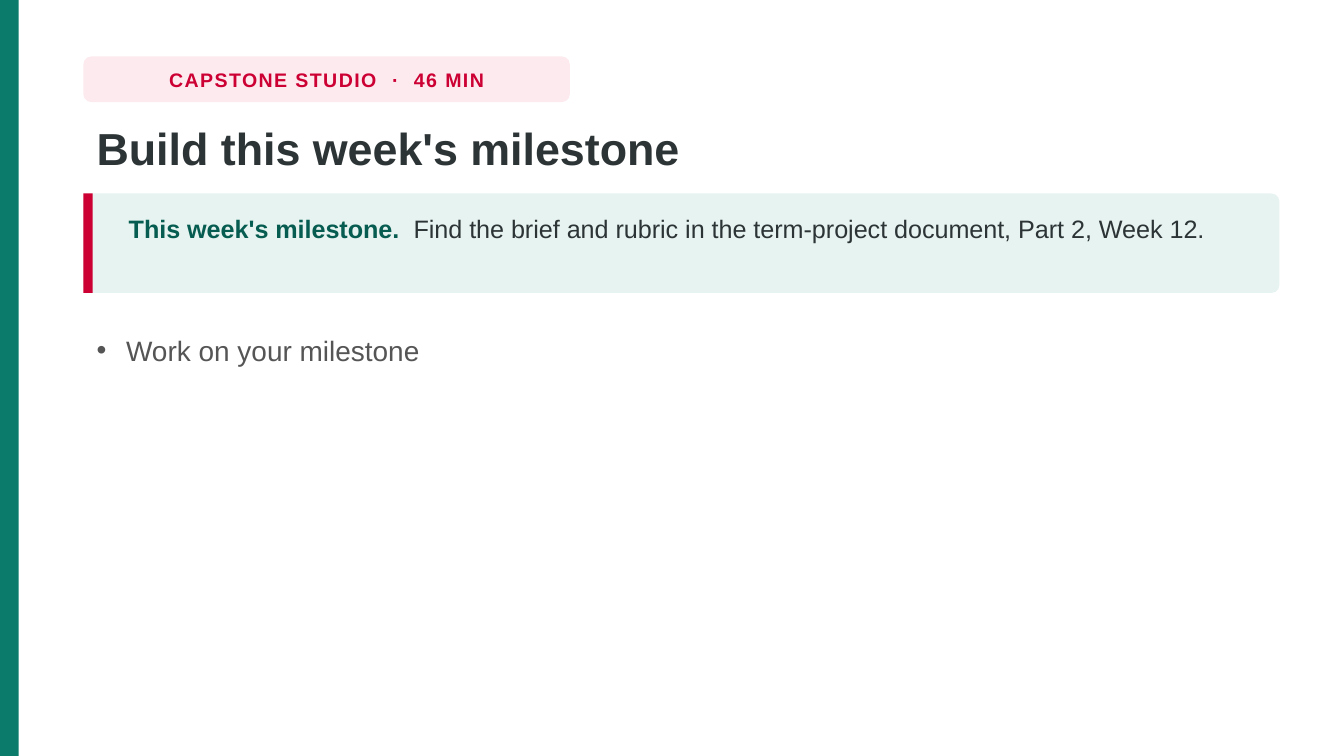
from lxml.etree import SubElement
from pptx import Presentation
from pptx.dml.color import RGBColor
from pptx.enum.shapes import MSO_SHAPE as Shape
from pptx.enum.text import MSO_ANCHOR as Anchor, PP_ALIGN as Align
from pptx.oxml.ns import qn
from pptx.util import Inches, Pt

CELL = 0.02  # inches per grid column and row
COLUMNS = 500
ROWS = COLUMNS * 9 / 16
LEFT, WIDTH = 31, 445
CORNER = 3  # corner radius of the panels, in cells
FONT = "Arial"
GREEN, DARK_GREEN, PALE_GREEN = "0B7B6B", "065C50", "E6F3F0"
RED, PALE_RED = "CC0033", "FDEAEF"
INK, GREY, WHITE = "2D3436", "555555", "FFFFFF"


def color(code):
    return RGBColor.from_string(code)


def cells(*counts):
    """Turn counts of grid cells into lengths."""
    return [Inches(count * CELL) for count in counts]


def add_panel(page, area, fill, rounded=False):
    kind = Shape.ROUNDED_RECTANGLE if rounded else Shape.RECTANGLE
    panel = page.shapes.add_shape(kind, *cells(*area))
    if rounded:
        panel.adjustments[0] = CORNER / min(area[2:])
    panel.shadow.inherit = False
    panel.fill.solid()
    panel.fill.fore_color.rgb = color(fill)
    panel.line.fill.background()


def add_text_box(page, area, line_spacing=None, wrap=True):
    """Add a text box and return it with its first paragraph."""
    box = page.shapes.add_textbox(*cells(*area))
    box.text_frame.word_wrap = wrap
    para = box.text_frame.paragraphs[0]
    para.line_spacing = line_spacing
    return box, para


def add_span(para, text, size, ink, bold=False, tracking=0):
    """Add one run; tracking is the letter spacing in points."""
    span = para.add_run()
    span.text = text
    span.font.name = FONT
    span.font.size = Pt(size)
    span.font.bold = bold
    span.font.color.rgb = color(ink)
    if tracking:
        span.font._element.set("spc", str(round(tracking * 100)))


def add_bullet(para, indent):
    props = para._p.get_or_add_pPr()
    props.set("marL", str(indent))
    props.set("indent", str(-indent))
    SubElement(props, qn("a:buFont")).set("typeface", FONT)
    SubElement(props, qn("a:buChar")).set("char", "•")


def add_badge(page, area, parts):
    """Add a label whose parts are set apart by widened spaces and a dot."""
    add_panel(page, area, PALE_RED, rounded=True)
    box, para = add_text_box(page, area, wrap=False)
    box.text_frame.vertical_anchor = Anchor.MIDDLE
    para.alignment = Align.CENTER
    for index, part in enumerate(parts):
        if index:
            for text, tracking in ((" ", 4.5), ("·", 0.8), (" ", 4.5)):
                add_span(para, text, 10.5, RED, True, tracking)
        add_span(para, part, 10.5, RED, True, 0.8)


def add_callout(page, area, lead, body):
    left, top, width, height = area
    add_panel(page, area, PALE_GREEN, rounded=True)
    add_panel(page, (left, top, 3.5, height), RED)
    _, para = add_text_box(
        page, (left + 12, top + 3.5, width - 25, height - 7), 1.14)
    add_span(para, lead, 13.5, DARK_GREEN, True)
    add_span(para, " ", 13.5, DARK_GREEN, True, 3.75)
    add_span(para, body, 13.5, INK)


def main():
    deck = Presentation()
    deck.slide_width, deck.slide_height = cells(COLUMNS, ROWS)
    page = deck.slides.add_slide(deck.slide_layouts[6])
    page.background.fill.solid()
    page.background.fill.fore_color.rgb = color(WHITE)

    add_panel(page, (0, 0, 7, ROWS), GREEN)
    add_badge(page, (LEFT, 21, 181, 17), ("CAPSTONE STUDIO", "46 MIN"))

    _, title = add_text_box(page, (LEFT, 42, WIDTH, 28), 1.02)
    add_span(title, "Build this week's milestone", 24, INK, True)

    add_callout(
        page, (LEFT, 72, WIDTH, 37), "This week's milestone.",
        "Find the brief and rubric in the term-project document, Part 2, Week 12.")

    _, task = add_text_box(page, (LEFT, 120, WIDTH, 15.5), 1.12)
    add_bullet(task, Inches(0.22))
    add_span(task, "Work on your milestone", 15, GREY)

    deck.save("out.pptx")


if __name__ == "__main__":
    main()
